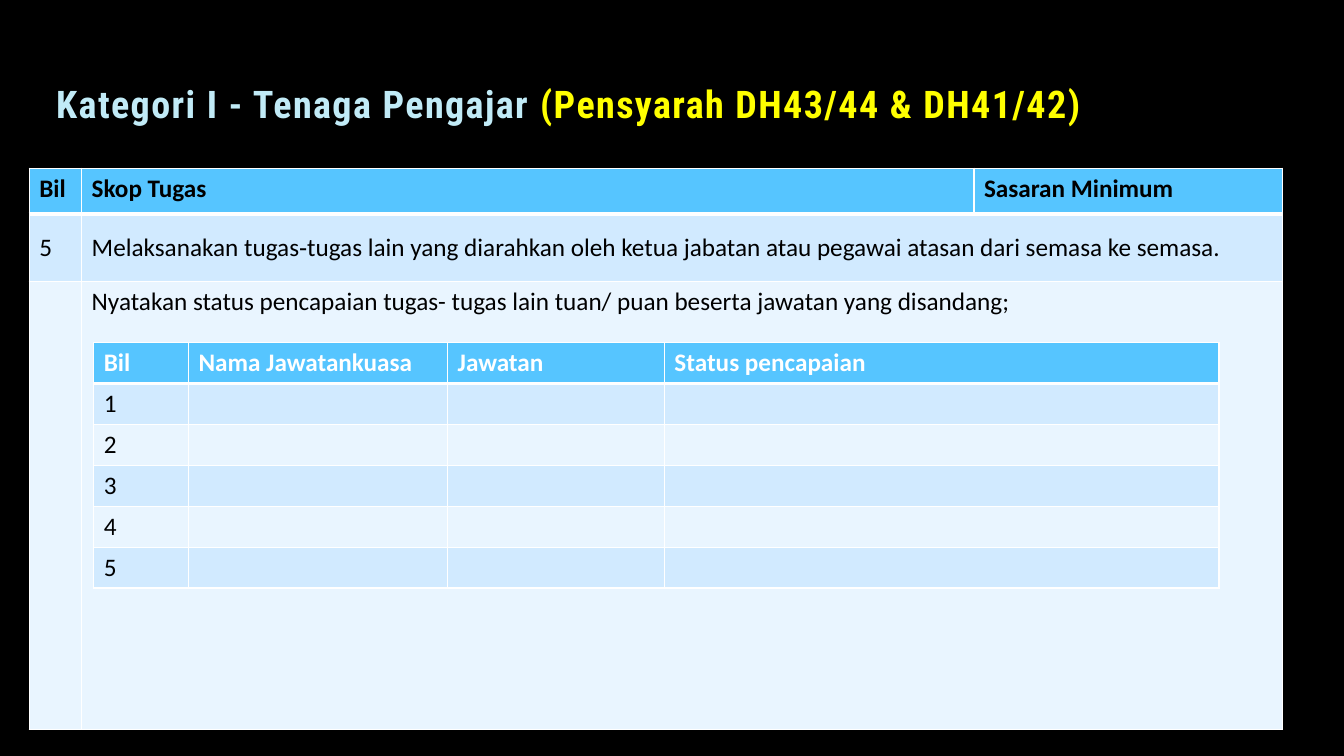
import pptx
import pptx.util
import pptx.dml.color
import pptx.enum.text
import pptx.oxml
import pptx.oxml.ns

Inches = pptx.util.Inches
Pt = pptx.util.Pt
RGB = pptx.dml.color.RGBColor
Anchor = pptx.enum.text.MSO_ANCHOR

BLACK = RGB(0, 0, 0)
WHITE = RGB(255, 255, 255)
SKY = RGB(0x56, 0xC5, 0xFF)
BANDS = [RGB(0xD1, 0xEA, 0xFF), RGB(0xE9, 0xF5, 0xFF)]
PALE = RGB(0xC1, 0xEB, 0xF7)
YELLOW = RGB(255, 255, 0)

TASKS = [
    ["Bil", "Skop Tugas", "Sasaran Minimum"],
    ["5", "Melaksanakan tugas‐tugas lain yang diarahkan oleh ketua jabatan "
     "atau pegawai atasan dari semasa ke semasa.", ""],
    ["", "Nyatakan status pencapaian tugas- tugas lain tuan/ puan beserta "
     "jawatan yang disandang;", ""],
]
POSTS = [["Bil", "Nama Jawatankuasa", "Jawatan", "Status pencapaian"]]
POSTS += [[str(n), "", "", ""] for n in range(1, 6)]


def add_edges(cell, row):
    widths = {"L": 1, "R": 1, "T": 3 if row == 1 else 1, "B": 3 if row == 0 else 1}
    props = cell._tc.get_or_add_tcPr()
    for side, width in widths.items():
        props.append(pptx.oxml.parse_xml(
            f'<a:ln{side} {pptx.oxml.ns.nsdecls("a")} w="{Pt(width)}">'
            f'<a:solidFill><a:srgbClr val="{WHITE}"/></a:solidFill></a:ln{side}>'))


def add_grid(slide, left, top, cols, rows, texts, head):
    frame = slide.shapes.add_table(
        len(rows), len(cols), Inches(left), Inches(top),
        Inches(sum(cols)), Inches(sum(rows)))
    table = frame.table
    for col, width in zip(table.columns, cols):
        col.width = Inches(width)
    for r, line in enumerate(texts):
        table.rows[r].height = Inches(rows[r])
        for c, text in enumerate(line):
            cell = table.cell(r, c)
            add_edges(cell, r)
            cell.fill.solid()
            cell.fill.fore_color.rgb = BANDS[(r - 1) % 2] if r else SKY
            cell.text = text
            font = cell.text_frame.paragraphs[0].font
            font.name = "Calibri"
            font.size = Pt(18)
            font.bold = r == 0
            font.color.rgb = BLACK if r else head
    return table


def add_title(slide, left, top, width, height):
    box = slide.shapes.add_textbox(
        Inches(left), Inches(top), Inches(width), Inches(height))
    frame = box.text_frame
    frame.word_wrap = True
    frame.vertical_anchor = Anchor.BOTTOM
    para = frame.paragraphs[0]
    para.line_spacing = 0.8
    para.font.name = "Roboto Condensed"
    para.font.size = Pt(27.2)
    para.font.bold = True
    for text, color in [("Kategori I - Tenaga Pengajar ", PALE),
                        ("(Pensyarah DH43/44 & DH41/42)", YELLOW)]:
        run = para.add_run()
        run.text = text
        run.font.color.rgb = color
        run._r.get_or_add_rPr().set("spc", "100")


def add_tasks(slide, left, top):
    table = add_grid(slide, left, top, [0.52, 8.85, 3.06],
                     [0.45, 0.67, 4.45], TASKS, BLACK)
    for r in (1, 2):
        table.cell(r, 1).merge(table.cell(r, 2))
    for c in (0, 1):
        table.cell(1, c).vertical_anchor = Anchor.MIDDLE
    add_grid(slide, left + 0.64, top + 1.73, [0.94, 2.57, 2.15, 5.5],
             [0.405] * len(POSTS), POSTS, WHITE)


def main():
    deck = pptx.Presentation()
    deck.slide_width = Inches(13.33)
    deck.slide_height = Inches(7.5)
    slide = deck.slides.add_slide(deck.slide_layouts[6])
    slide.background.fill.solid()
    slide.background.fill.fore_color.rgb = BLACK
    add_tasks(slide, 0.29, 1.67)
    add_title(slide, 0.46, 0.63, 11.37, 0.67)
    deck.save("out.pptx")


if __name__ == "__main__":
    main()
